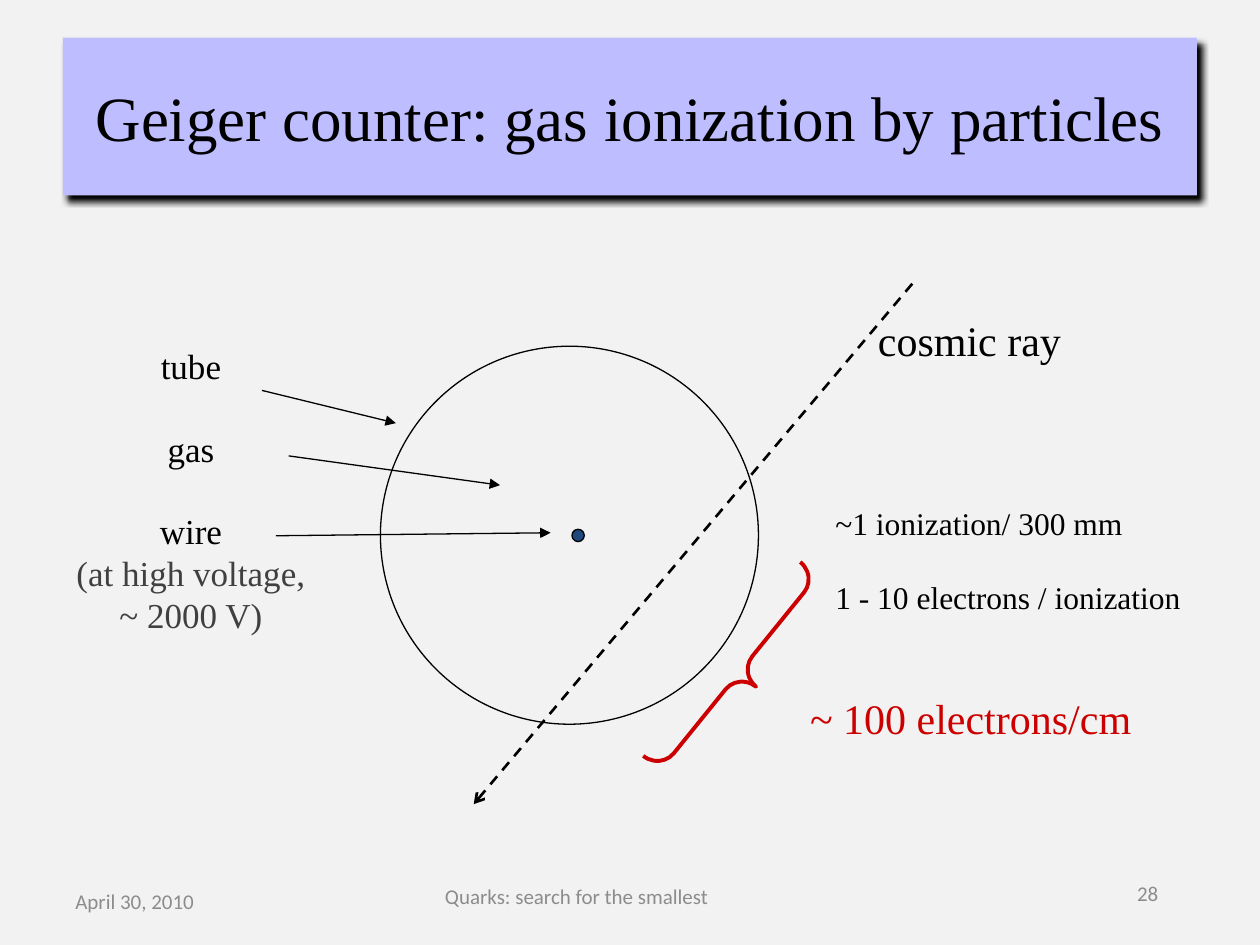
"""Build the slide on gas ionization in a Geiger counter."""
import dataclasses

import lxml.etree
import pptx
import pptx.dml.color
import pptx.enum.dml
import pptx.enum.shapes
import pptx.enum.text
import pptx.oxml
import pptx.oxml.ns
import pptx.util

Cm, Pt = pptx.util.Cm, pptx.util.Pt
RGB = pptx.dml.color.RGBColor.from_string
Shape = pptx.enum.shapes.MSO_SHAPE
Align = pptx.enum.text.PP_ALIGN
Fit = pptx.enum.text.MSO_AUTO_SIZE
Anchor = pptx.enum.text.MSO_ANCHOR
qn = pptx.oxml.ns.qn


@dataclasses.dataclass(frozen=True)
class Theme:
    back: str = "F2F2F2"
    band: str = "BDBDFF"
    ink: str = "000000"
    soft: str = "404040"
    red: str = "CC0000"
    blue: str = "1F497D"
    grey: str = "8C8C8C"
    serif: str = "Times New Roman"
    sans: str = "Calibri"
    head: int = 36
    large: int = 24
    label: int = 20
    note: int = 18
    foot: int = 12


theme = Theme()


def write(shape, rows, size, face=theme.serif, align=Align.LEFT, **frame):
    text = shape.text_frame
    for name, value in frame.items():
        setattr(text, name, value)
    for i, (words, color, gap) in enumerate(rows):
        para = text.paragraphs[0] if i == 0 else text.add_paragraph()
        para.alignment, para.space_before = align, Pt(gap)
        run = para.add_run()
        run.text = words
        for name, value in {"size": Pt(size), "name": face}.items():
            setattr(run.font, name, value)
        run.font.color.rgb = RGB(color)


def draw(kind, box, fill=None, line=None, width=0.75):
    shape = slide.shapes.add_shape(kind, *map(Cm, box))
    shape.shadow.inherit = False
    for part, color in ((shape.fill, fill), (shape.line.fill, line)):
        if color:
            part.solid()
            part.fore_color.rgb = RGB(color)
        else:
            part.background()
    if line:
        shape.line.width = Pt(width)
    return shape


deck = pptx.Presentation()
deck.slide_width, deck.slide_height = Cm(25.4), Cm(19.05)
slide = deck.slides.add_slide(deck.slide_layouts[6])
slide.background.fill.solid()
slide.background.fill.fore_color.rgb = RGB(theme.back)

feet = [
    ("April 30, 2010", 1.27, 17.65, Align.LEFT),
    ("Quarks: search for the smallest", 8.61, 17.55, Align.RIGHT),
    ("28", 17.68, 17.5, Align.RIGHT),
]
for words, left, top, align in feet:
    box = slide.shapes.add_textbox(Cm(left), Cm(top), Cm(5.92), Cm(1.02))
    write(box, [(words, theme.grey, 0)], theme.foot, theme.sans, align,
          word_wrap=True, vertical_anchor=Anchor.MIDDLE)

title = draw(Shape.RECTANGLE, (1.27, 0.76, 22.86, 3.18), theme.band)
write(title, [("Geiger counter: gas ionization by particles", theme.ink, 0)],
      theme.head, align=Align.CENTER, word_wrap=True,
      vertical_anchor=Anchor.MIDDLE)
glow = lxml.etree.SubElement(
    title._element.spPr.find(qn("a:effectLst")), qn("a:outerShdw"),
    blurRad=str(Pt(4)), dist=str(Pt(4)), dir="2700000", algn="tl",
    rotWithShape="0")
tint = lxml.etree.SubElement(glow, qn("a:srgbClr"), val=theme.ink)
lxml.etree.SubElement(tint, qn("a:alpha"), val="99000")

draw(Shape.OVAL, (7.67, 6.98, 7.62, 7.62), line=theme.ink)
draw(Shape.OVAL, (11.53, 10.67, 0.25, 0.25), theme.blue, theme.ink)
brace = draw(Shape.RIGHT_BRACE, (14.45, 11.05, 0.89, 5.03),
             line=theme.red, width=2.25)
brace.rotation = 39
brace.adjustments[0], brace.adjustments[1] = 0.48, 0.5

dash = pptx.enum.dml.MSO_LINE.DASH
lines = [
    ((18.39, 5.72, 9.55, 16.21), 1.5, dash, "arrow"),
    ((5.28, 7.87, 7.98, 8.53), 0.75, None, "triangle"),
    ((5.82, 9.19, 10.08, 9.78), 0.75, None, "triangle"),
    ((5.56, 10.8, 11.1, 10.74), 0.75, None, "triangle"),
]
for ends, width, style, tip in lines:
    link = slide.shapes.add_connector(
        pptx.enum.shapes.MSO_CONNECTOR.STRAIGHT, *map(Cm, ends))
    link.line.color.rgb = RGB(theme.ink)
    for name, value in {"width": Pt(width), "dash_style": style}.items():
        setattr(link.line, name, value)
    lxml.etree.SubElement(link.line._get_or_add_ln(), qn("a:tailEnd"), type=tip)
    lxml.etree.SubElement(link._element.spPr, qn("a:effectLst"))

parts = [
    ("tube", theme.ink, 0),
    ("gas", theme.ink, 23),
    ("wire", theme.ink, 23),
    ("(at high voltage,", theme.soft, 0),
    ("~ 2000 V)", theme.soft, 0),
]
rates = [
    ("~1 ionization/ 300 mm", theme.ink, 0),
    ("1 - 10 electrons / ionization", theme.ink, 20.7),
]
ray = [("cosmic ray", theme.ink, 0)]
total = [("~ 100 electrons/cm", theme.red, 0)]
notes = [
    ((0.84, 6.83, 6.02, 6.25), parts, theme.label, Align.CENTER, True),
    ((17.45, 6.22, 4.24, 1.27), ray, theme.large, Align.LEFT, False),
    ((16.59, 10.03, 7.54, 2.57), rates, theme.note, Align.LEFT, False),
    ((16.08, 13.84, 7.04, 1.27), total, theme.large, Align.LEFT, False),
]
for place, rows, size, align, wrap in notes:
    box = slide.shapes.add_textbox(*map(Cm, place))
    write(box, rows, size, align=align, word_wrap=wrap,
          auto_size=Fit.SHAPE_TO_FIT_TEXT)

deck.save("out.pptx")
